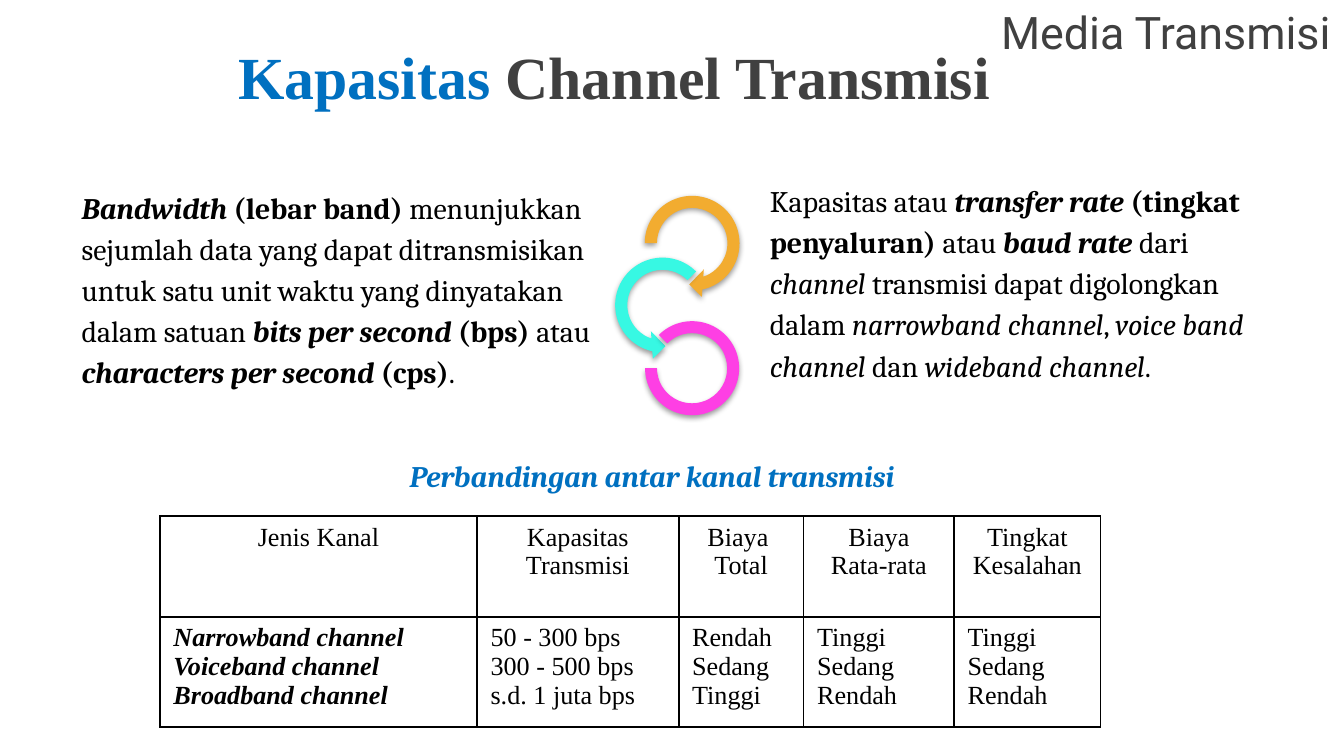
from dataclasses import dataclass

from lxml.etree import SubElement
from pptx import Presentation
from pptx.dml.color import RGBColor as Color
from pptx.enum.shapes import MSO_SHAPE as Shape
from pptx.enum.text import MSO_ANCHOR as Anchor, MSO_AUTO_SIZE as Fit, PP_ALIGN as Align
from pptx.oxml import parse_xml
from pptx.oxml.ns import nsdecls, qn
from pptx.util import Pt


@dataclass(frozen=True)
class Theme:
    black: str = "000000"
    gray: str = "404040"
    blue: str = "0070C0"
    orange: str = "F2AC30"
    turquoise: str = "37F8E3"
    magenta: str = "FE3FE4"
    serif: str = "Times New Roman"
    book: str = "Cambria"
    sans: str = "Roboto"
    title: int = 32
    header: int = 24
    body: int = 16
    cell: int = 14


THEME = Theme()

BANDWIDTH = [
    ("Bandwidth", "bi"), (" (lebar band) ", "b"),
    ("menunjukkan sejumlah data yang dapat ditransmisikan untuk satu unit waktu "
     "yang dinyatakan dalam satuan ", ""),
    ("bits per second", "bi"), (" (bps) ", "b"), ("atau ", ""),
    ("characters per second ", "bi"), ("(cps)", "b"), (".", ""),
]
CAPACITY = [
    ("Kapasitas atau ", ""), ("transfer rate", "bi"), (" (tingkat penyaluran) ", "b"),
    ("atau ", ""), ("baud rate ", "bi"), ("dari ", ""), ("channel ", "i"),
    ("transmisi dapat digolongkan dalam ", ""), ("narrowband channel", "i"), (", ", ""),
    ("voice band channel ", "i"), ("dan ", ""), ("wideband channel", "i"), (".", ""),
]
COLUMNS = [
    (169.92, ["Jenis Kanal"],
     ["Narrowband channel", "Voiceband channel", "Broadband channel"]),
    (108, ["Kapasitas", "Transmisi"], ["50 - 300 bps", "300 - 500 bps", "s.d. 1 juta bps"]),
    (66.96, ["Biaya ", "Total"], ["Rendah", "Sedang", "Tinggi"]),
    (80.64, ["Biaya", "Rata-rata"], ["Tinggi", "Sedang", "Rendah"]),
    (78.48, ["Tingkat", "Kesalahan"], ["Tinggi", "Sedang", "Rendah"]),
]
ROW_HEIGHTS = (54, 59.04)


def add_span(para, text, font, size, color, style=""):
    span = para.add_run()
    span.text = text
    span.font.name = font
    span.font.size = Pt(size)
    span.font.color.rgb = Color.from_string(color)
    span.font.bold = "b" in style
    span.font.italic = "i" in style


def set_indent(para, left, first):
    properties = para._p.get_or_add_pPr()
    properties.set("marL", str(Pt(left)))
    properties.set("indent", str(Pt(first)))
    return properties


def place(box, left, top, width, height):
    box.left, box.top, box.width, box.height = map(Pt, (left, top, width, height))


def fill_title(box):
    place(box, -30.96, 15.12, 720, 51.12)
    frame = box.text_frame
    frame.auto_size = Fit.NONE
    frame.vertical_anchor = Anchor.MIDDLE
    para = frame.paragraphs[0]
    para.alignment = Align.CENTER
    add_span(para, "Kapasitas ", THEME.serif, THEME.title, THEME.blue, "b")
    add_span(para, "Channel Transmisi", THEME.serif, THEME.title, THEME.gray, "b")


def fill_header(box):
    place(box, 0, 20.88, 720, 17.28)
    frame = box.text_frame
    frame.auto_size = Fit.NONE
    frame.vertical_anchor = Anchor.BOTTOM
    frame.margin_top = Pt(0)
    frame.margin_bottom = Pt(7)
    para = frame.paragraphs[0]
    para.alignment = Align.RIGHT
    para.space_before = Pt(0)
    SubElement(set_indent(para, 0, 0), qn("a:buNone"))
    add_span(para, "Media Transmisi", THEME.sans, THEME.header, THEME.gray)


def add_text(page, bounds, spans, color=THEME.black, spacing=1.0, wrap=True):
    box = page.shapes.add_textbox(*map(Pt, bounds))
    frame = box.text_frame
    frame.word_wrap = wrap
    frame.auto_size = Fit.SHAPE_TO_FIT_TEXT
    para = frame.paragraphs[0]
    para.line_spacing = spacing
    for text, style in spans:
        add_span(para, text, THEME.book, THEME.body, color, style)


def add_borders(cell):
    properties = cell._tc.get_or_add_tcPr()
    for position, side in enumerate("LRTB"):
        properties.insert(position, parse_xml(
            f'<a:ln{side} {nsdecls("a")} w="{Pt(1)}"><a:solidFill>'
            f'<a:srgbClr val="{THEME.black}"/></a:solidFill></a:ln{side}>'))


def fill_cell(cell, lines, alignment, style):
    cell.fill.background()
    add_borders(cell)
    frame = cell.text_frame
    for index, line in enumerate(lines):
        para = frame.add_paragraph() if index else frame.paragraphs[0]
        para.alignment = alignment
        set_indent(para, 27, -27)
        add_span(para, line, THEME.serif, THEME.cell, THEME.black, style)


def add_comparison(page):
    width = sum(column[0] for column in COLUMNS)
    bounds = map(Pt, (85.68, 276.48, width, sum(ROW_HEIGHTS)))
    table = page.shapes.add_table(len(ROW_HEIGHTS), len(COLUMNS), *bounds).table
    table.first_row = table.horz_banding = False
    for row, height in zip(table.rows, ROW_HEIGHTS):
        row.height = Pt(height)
    for index, (column_width, heading, values) in enumerate(COLUMNS):
        table.columns[index].width = Pt(column_width)
        fill_cell(table.cell(0, index), heading, Align.CENTER, "")
        fill_cell(table.cell(1, index), values, Align.JUSTIFY, "" if index else "bi")


def add_arc(group, kind, bounds, color, adjustments):
    arc = group.shapes.add_shape(kind, *map(Pt, bounds))
    for index, value in enumerate(adjustments):
        arc.adjustments[index] = value
    arc.fill.solid()
    arc.fill.fore_color.rgb = Color.from_string(color)
    arc.line.fill.background()
    arc.shadow.inherit = False
    arc._element.spPr.find(qn("a:effectLst")).append(parse_xml(
        f'<a:outerShdw {nsdecls("a")} blurRad="{Pt(3.1)}" dist="{Pt(1.6)}" dir="5400000" '
        f'rotWithShape="0"><a:srgbClr val="{THEME.black}"><a:alpha val="38000"/>'
        '</a:srgbClr></a:outerShdw>'))


def add_cycle(page):
    group = page.shapes.add_group_shape()
    add_arc(group, Shape.CIRCULAR_ARROW, (341.28, 100.8, 59.04, 59.04), THEME.orange,
            (0.11, 11.42, 45, 108, 0.125))
    add_arc(group, Shape.LEFT_CIRCULAR_ARROW, (325.44, 133.92, 59.04, 59.04), THEME.turquoise,
            (0.11, 11.42, 63, 189, 0.125))
    add_arc(group, Shape.BLOCK_ARC, (345.6, 172.08, 50.4, 50.4), THEME.magenta,
            (135, 108, 0.127))


def main():
    deck = Presentation()
    deck.slide_width, deck.slide_height = Pt(720), Pt(405)
    page = deck.slides.add_slide(deck.slide_layouts[1])
    fill_title(page.shapes.title)
    fill_header(page.placeholders[1])
    add_text(page, (36.72, 95.04, 300.24, 118.8), BANDWIDTH, spacing=1.15)
    add_text(page, (405.36, 91.44, 280.08, 118.8), CAPACITY, spacing=1.15)
    add_comparison(page)
    add_text(page, (212.4, 241.92, 286.56, 26.64),
             [("Perbandingan antar kanal transmisi", "bi")], THEME.blue, wrap=False)
    add_cycle(page)
    deck.save("out.pptx")


if __name__ == "__main__":
    main()
